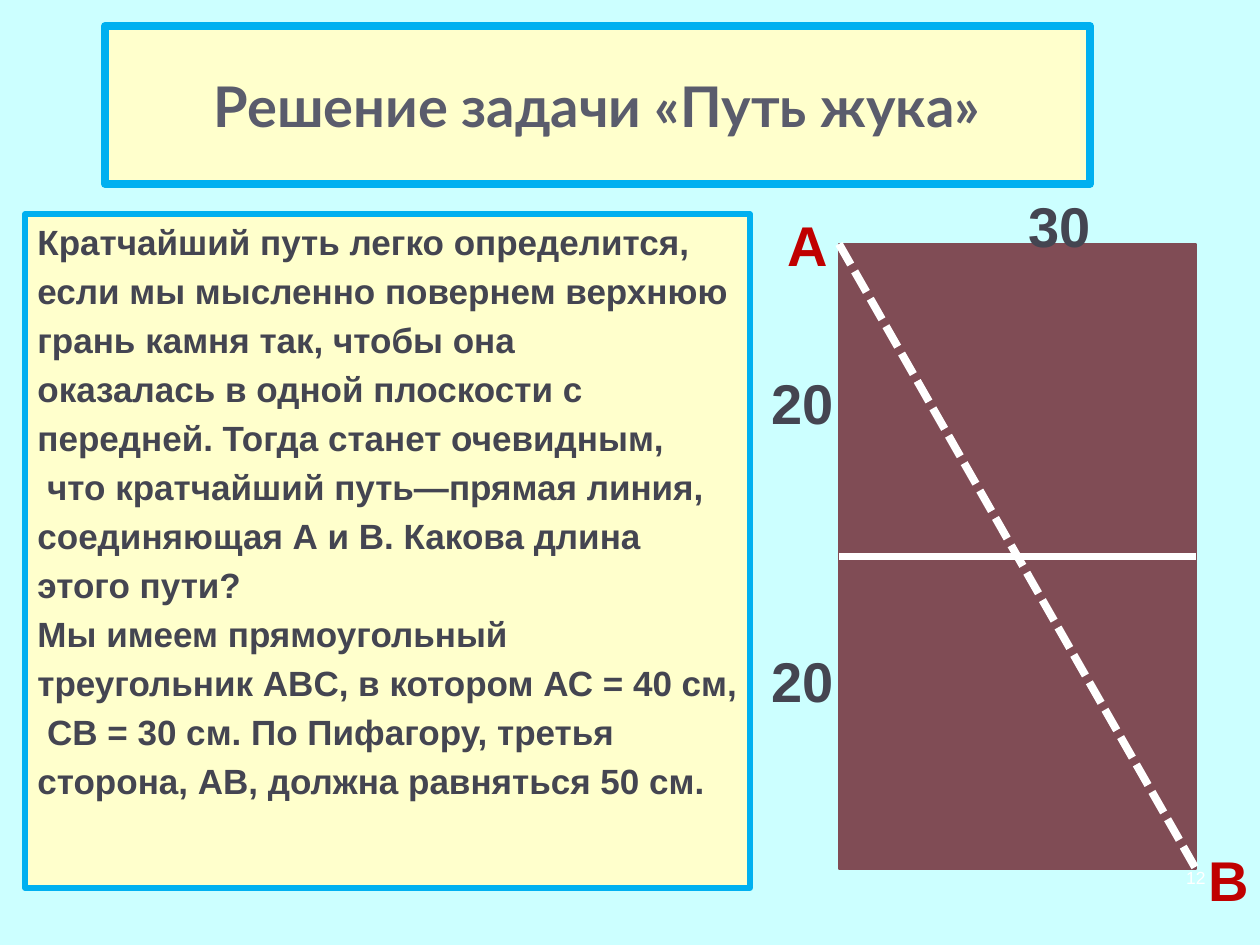
from dataclasses import dataclass

from lxml import etree
from pptx import Presentation
from pptx.dml.color import RGBColor
from pptx.enum.dml import MSO_LINE
from pptx.enum.shapes import MSO_CONNECTOR, MSO_SHAPE
from pptx.enum.text import MSO_ANCHOR, PP_ALIGN
from pptx.oxml.ns import qn
from pptx.util import Emu, Pt

DASH = MSO_LINE.SQUARE_DOT
STRAIGHT = MSO_CONNECTOR.STRAIGHT
RECTANGLE = MSO_SHAPE.RECTANGLE
TOP, MIDDLE = MSO_ANCHOR.TOP, MSO_ANCHOR.MIDDLE
LEFT, CENTER, RIGHT = PP_ALIGN.LEFT, PP_ALIGN.CENTER, PP_ALIGN.RIGHT

PX_PER_INCH = 126
LEFT_SIDE, RIGHT_SIDE = 1, 3

COLORS = {
    "background": "CCFFFF",
    "panel": "FFFFCC",
    "border": "00B0F0",
    "title": "5A5C6C",
    "text": "444551",
    "point": "C00000",
    "stone": "804C55",
    "white": "FFFFFF",
}

SOLUTION = [
    "Кратчайший путь легко определится,",
    "если мы мысленно повернем верхнюю",
    "грань камня так, чтобы она",
    "оказалась в одной плоскости с",
    "передней. Тогда станет очевидным,",
    " что кратчайший путь—прямая линия,",
    "соединяющая А и В. Какова длина",
    "этого пути?",
    "Мы имеем прямоугольный",
    "треугольник ABC, в котором АС = 40 см,",
    " СВ = 30 см. По Пифагору, третья",
    "сторона, АВ, должна равняться 50 см.",
]


@dataclass
class Area:
    left: int
    top: int
    width: int
    height: int

    def emu(self) -> list[Emu]:
        return [px(n) for n in (self.left, self.top, self.width, self.height)]


@dataclass
class TextStyle:
    size: int
    color: str
    font: str = "Arial"
    bold: bool = True
    align: PP_ALIGN = LEFT


@dataclass
class Label:
    text: str
    area: Area
    style: TextStyle


def px(count: int) -> Emu:
    return Emu(round(count * 914400 / PX_PER_INCH))


def rgb(name: str) -> RGBColor:
    return RGBColor.from_string(COLORS[name])


def paint(shape, fill: str, line: str, weight: float) -> None:
    shape.fill.solid()
    shape.fill.fore_color.rgb = rgb(fill)
    shape.line.color.rgb = rgb(line)
    shape.line.width = Pt(weight)


def write(frame, lines: list[str], style: TextStyle, gap: int = 0) -> None:
    """Fill a text frame, one paragraph per line, with gap points between them."""
    for index, line in enumerate(lines):
        para = frame.add_paragraph() if index else frame.paragraphs[0]
        para.alignment = style.align
        para.space_before = Pt(gap if index else 0)
        span = para.add_run()
        span.text = line
        span.font.name = style.font
        span.font.size = Pt(style.size)
        span.font.bold = style.bold
        span.font.color.rgb = rgb(style.color)


def add_rectangle(page, area: Area, fill: str, line: str, weight: float):
    box = page.shapes.add_shape(RECTANGLE, *area.emu())
    box.shadow.inherit = False
    paint(box, fill, line, weight)
    return box


def add_label(page, label: Label) -> None:
    box = page.shapes.add_textbox(*label.area.emu())
    box.text_frame.word_wrap = True
    write(box.text_frame, [label.text], label.style)


def add_line(page, left: int, top: int, right: int, bottom: int):
    line = page.shapes.add_connector(STRAIGHT, px(left), px(top), px(right), px(bottom))
    line.line.color.rgb = rgb("white")
    line.line.width = Pt(4.5)
    etree.SubElement(line._element.spPr, qn("a:effectLst"))
    return line


def add_title(page) -> None:
    title = page.shapes.title
    title.left, title.top, title.width, title.height = Area(105, 26, 985, 158).emu()
    paint(title, "panel", "border", 4.5)
    title.text_frame.vertical_anchor = MIDDLE
    write(title.text_frame, ["Решение задачи «Путь жука»"],
          TextStyle(32, "title", font="Lato", align=CENTER))


def add_solution(page) -> None:
    panel = add_rectangle(page, Area(25, 214, 725, 674), "panel", "border", 3)
    panel.text_frame.word_wrap = True
    panel.text_frame.vertical_anchor = TOP
    write(panel.text_frame, SOLUTION, TextStyle(20, "text"), gap=4)


def add_unfolded_stone(page) -> None:
    stone = Area(839, 244, 357, 625)
    right, bottom = stone.left + stone.width, stone.top + stone.height
    middle = stone.top + stone.height // 2
    faces = add_rectangle(page, stone, "stone", "stone", 0.75)

    beetle_path = add_line(page, stone.left, stone.top, right, bottom)
    beetle_path.line.dash_style = DASH
    edge = add_line(page, stone.left, middle, right, middle)
    edge.begin_connect(faces, LEFT_SIDE)
    edge.end_connect(faces, RIGHT_SIDE)

    point, length = TextStyle(32, "point"), TextStyle(32, "text")
    for label in (
        Label("В", Area(1196, 839, 63, 81), point),
        Label("А", Area(775, 204, 63, 81), point),
        Label("20", Area(759, 362, 91, 81), length),
        Label("20", Area(759, 640, 108, 81), length),
        Label("30", Area(1016, 185, 91, 81), length),
    ):
        add_label(page, label)


def main() -> None:
    deck = Presentation()
    deck.slide_width, deck.slide_height = px(1260), px(945)
    page = deck.slides.add_slide(deck.slide_layouts[5])
    page.background.fill.solid()
    page.background.fill.fore_color.rgb = rgb("background")

    add_title(page)
    add_solution(page)
    add_label(page, Label("12", Area(903, 861, 315, 66),
                          TextStyle(10, "white", bold=False, align=RIGHT)))
    add_unfolded_stone(page)
    deck.save("out.pptx")


if __name__ == "__main__":
    main()
